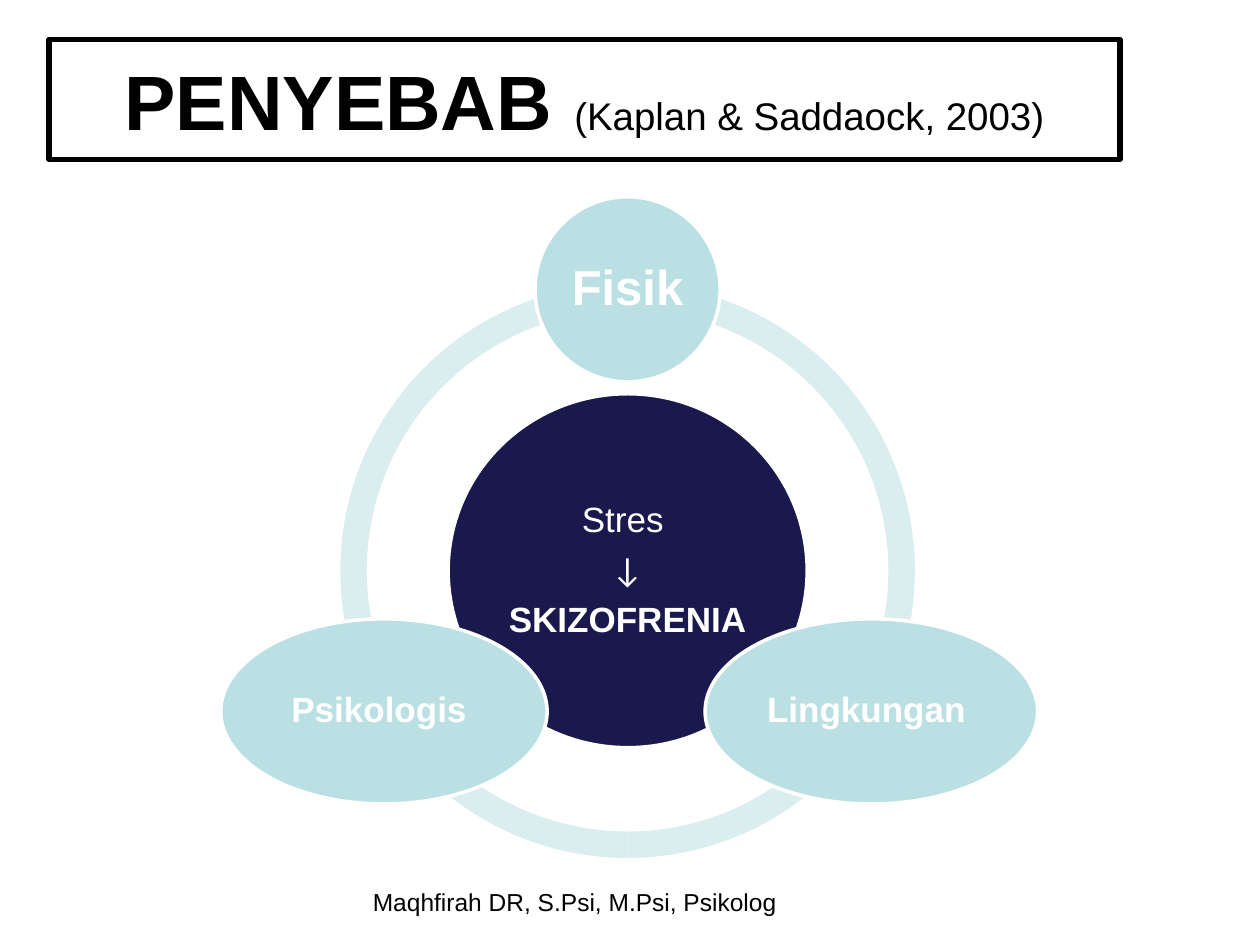
import math

from pptx import Presentation
from pptx.dml.color import RGBColor
from pptx.enum.shapes import MSO_SHAPE
from pptx.enum.text import MSO_ANCHOR, PP_ALIGN
from pptx.util import Pt

ELLIPSE, ARC = MSO_SHAPE.OVAL, MSO_SHAPE.BLOCK_ARC
MIDDLE, TOP = MSO_ANCHOR.MIDDLE, MSO_ANCHOR.TOP
CENTER = PP_ALIGN.CENTER
COLORS = {"black": "000000", "white": "FFFFFF", "navy": "19194D",
          "aqua": "BBE0E3", "ring": "DAEDEF"}


def color(name):
    return RGBColor.from_string(COLORS[name])


def add_run(p, text, size, ink, bold=False, font="Arial"):
    r = p.add_run()
    r.text = text
    r.font.name, r.font.size, r.font.bold = font, Pt(size), bold
    r.font.color.rgb = color(ink)


def add_box(s, x, y, w, h, anchor):
    """Wrapping text box; returns it with its centred first paragraph."""
    sp = s.shapes.add_textbox(Pt(x), Pt(y), Pt(w), Pt(h))
    tf = sp.text_frame
    tf.word_wrap, tf.vertical_anchor = True, anchor
    p = tf.paragraphs[0]
    p.alignment = CENTER
    return sp, p


def add_title(s, x, y, w, h):
    sp, p = add_box(s, x, y, w, h, MIDDLE)
    sp.line.color.rgb = color("black")
    sp.line.width = Pt(3)
    add_run(p, "PENYEBAB ", 44, "black", bold=True)
    add_run(p, "(Kaplan & Saddaock, 2003)", 22, "black")


def add_footer(s, x, y, w, h):
    _, p = add_box(s, x, y, w, h, TOP)
    add_run(p, "Maqhfirah DR, S.Psi, M.Psi, Psikolog", 14, "black")


def add_bubble(group, cx, cy, w, h, fill, lines, inset):
    """Outlined ellipse around a centre; lines are (text, size, bold, font)."""
    sp = group.shapes.add_shape(ELLIPSE, Pt(cx - w / 2), Pt(cy - h / 2), Pt(w), Pt(h))
    sp.shadow.inherit = False
    sp.fill.solid()
    sp.fill.fore_color.rgb = color(fill)
    sp.line.color.rgb = color("white")
    sp.line.width = Pt(2)
    tf = sp.text_frame
    tf.word_wrap, tf.vertical_anchor = True, MIDDLE
    tf.margin_left = tf.margin_right = tf.margin_top = tf.margin_bottom = Pt(inset)
    for i, (text, size, bold, font) in enumerate(lines):
        p = tf.paragraphs[0] if i == 0 else tf.add_paragraph()
        p.alignment, p.line_spacing, p.space_after = CENTER, 0.9, Pt(size * 0.35)
        add_run(p, text, size, "white", bold, font)


def add_cycle(s, x, y, size):
    group = s.shapes.add_group_shape()
    cx, cy = x + size / 2, y + size / 2

    # Ring: one arc between each pair of causes
    for start, end in ((90, 162), (18, 90), (162, 18)):
        arc = group.shapes.add_shape(ARC, Pt(x), Pt(y), Pt(size), Pt(size))
        arc.shadow.inherit = False
        arc.fill.solid()
        arc.fill.fore_color.rgb = color("ring")
        arc.line.fill.background()
        # Angles are stored in 1/60000 degree, adjustments in 1/100000
        for i, value in enumerate((start * 0.6, end * 0.6, 0.046)):
            arc.adjustments[i] = value

    # Outcome in the middle
    add_bubble(group, cx, cy, 205.2, 202.3, "navy",
               [("Stres ", 20, False, "Arial"), ("↓", 20, False, "Calibri"),
                ("SKIZOFRENIA", 20, True, "Arial")], 2)

    # Causes, spaced evenly around the ring
    radius = 160.8
    causes = (("Fisik ", 28, 105.8), ("Lingkungan ", 20, 190), ("Psikologis ", 20, 186.5))
    for i, (text, font_size, w) in enumerate(causes):
        angle = math.radians(-90 + i * 360 / len(causes))
        add_bubble(group, cx + radius * math.cos(angle), cy + radius * math.sin(angle),
                   w, 105.8, "aqua", [(text, font_size, True, "Arial")], 2.5)


def main():
    prs = Presentation()
    prs.slide_width, prs.slide_height = Pt(720), Pt(540)
    s = prs.slides.add_slide(prs.slide_layouts[6])
    add_title(s, 28, 22.5, 612, 68.5)
    add_cycle(s, 194.5, 162, 328.3)
    add_footer(s, 193.5, 503.5, 270, 24.5)
    prs.save("out.pptx")


if __name__ == "__main__":
    main()
